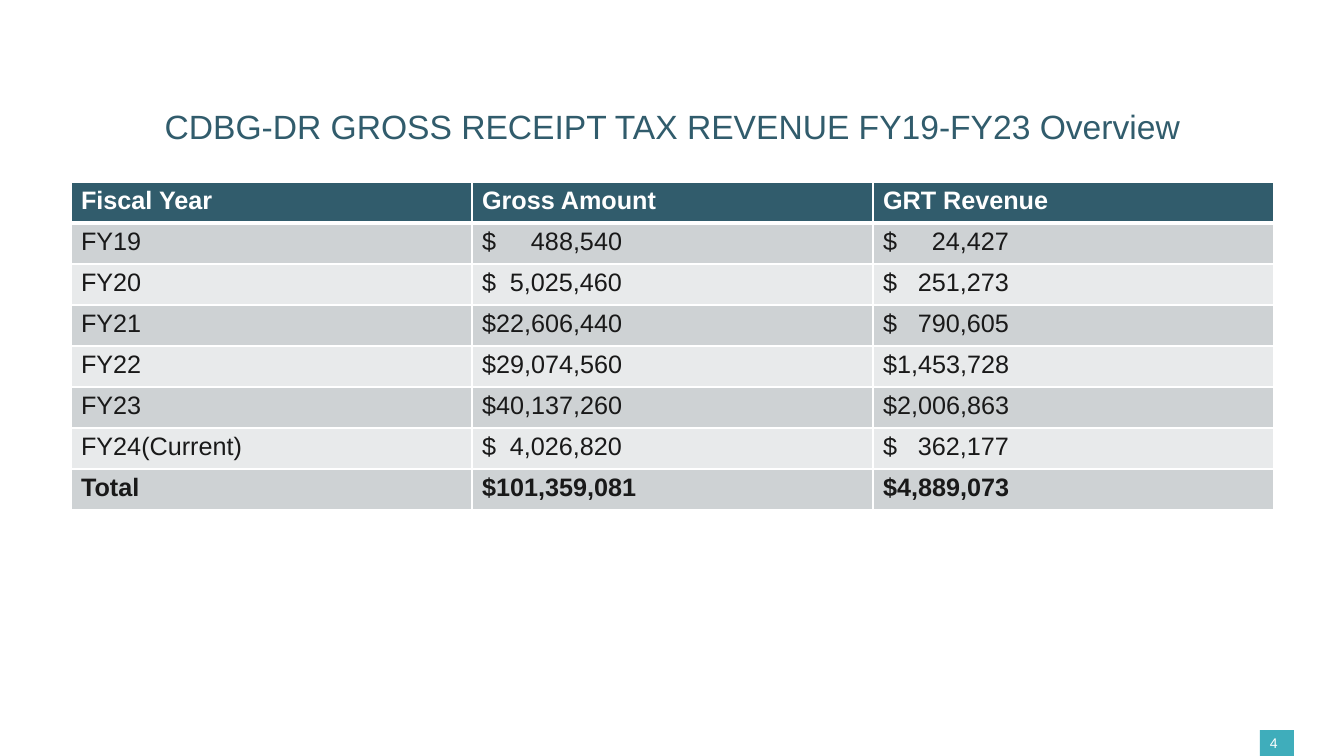
from dataclasses import dataclass

from lxml import etree
from pptx import Presentation
from pptx.dml.color import RGBColor
from pptx.enum.shapes import MSO_SHAPE
from pptx.enum.text import PP_ALIGN
from pptx.oxml.ns import qn
from pptx.util import Emu, Pt

RECTANGLE = MSO_SHAPE.RECTANGLE
LEFT, CENTER = PP_ALIGN.LEFT, PP_ALIGN.CENTER

FONT = "Arial"
WHITE, INK, TEAL, AQUA = "FFFFFF", "191919", "315C6C", "3FADBB"
BANDS = ("CED2D4", "E8EAEB")
COLUMN_WIDTH, ROW_HEIGHT = 401, 41
AMOUNT_STOPS = (0, 140, 126)
HEADINGS = ("Fiscal Year", "Gross Amount", "GRT Revenue")


@dataclass
class Area:
    left: int
    top: int
    width: int
    height: int

    def emu(self) -> list[Emu]:
        return [px(n) for n in (self.left, self.top, self.width, self.height)]


@dataclass
class YearRow:
    label: str
    gross: str
    revenue: str
    bold: bool = False


YEARS = [
    YearRow("FY19", "$\t488,540", "$\t24,427"),
    YearRow("FY20", "$\t5,025,460", "$\t251,273"),
    YearRow("FY21", "$22,606,440", "$\t790,605"),
    YearRow("FY22", "$29,074,560", "$1,453,728"),
    YearRow("FY23", "$40,137,260", "$2,006,863"),
    YearRow("FY24(Current)", "$\t4,026,820", "$\t362,177"),
    YearRow("Total", "$101,359,081", "$4,889,073", bold=True),
]


def px(length: int) -> Emu:
    return Emu(round(length * 914400 / 100.8))


def color(code: str) -> RGBColor:
    return RGBColor.from_string(code)


def write(frame, text: str, *, size: int, ink: str, bold: bool = False,
          align=LEFT, spacing: float = 1.0, right_stop: int = 0) -> None:
    frame.word_wrap = True
    para = frame.paragraphs[0]
    if right_stop:
        tabs = etree.SubElement(para._p.get_or_add_pPr(), qn("a:tabLst"))
        etree.SubElement(tabs, qn("a:tab"), pos=str(px(right_stop)), algn="r")
    para.alignment = align
    para.line_spacing = spacing
    span = para.add_run()
    span.text = text
    span.font.name = FONT
    span.font.size = Pt(size)
    span.font.bold = bold
    span.font.color.rgb = color(ink)


def add_text(page, area: Area, text: str, **style) -> None:
    write(page.shapes.add_textbox(*area.emu()).text_frame, text, **style)


def add_block(page, area: Area, fill: str) -> None:
    block = page.shapes.add_shape(RECTANGLE, *area.emu())
    block.shadow.inherit = False
    block.fill.solid()
    block.fill.fore_color.rgb = color(fill)
    block.line.fill.background()


def set_borders(cell, top: int, bottom: int) -> None:
    properties = cell._tc.get_or_add_tcPr()
    for side, width in (("L", 1), ("R", 1), ("T", top), ("B", bottom)):
        line = etree.SubElement(properties, qn(f"a:ln{side}"), w=str(Pt(width)))
        fill = etree.SubElement(line, qn("a:solidFill"))
        etree.SubElement(fill, qn("a:srgbClr"), val=WHITE)


def add_revenue_table(page, left: int, top: int) -> None:
    rows = [YearRow(*HEADINGS, bold=True), *YEARS]
    area = Area(left, top, COLUMN_WIDTH * len(HEADINGS), ROW_HEIGHT * len(rows))
    table = page.shapes.add_table(len(rows), len(HEADINGS), *area.emu()).table
    table.horz_banding = False
    for column in table.columns:
        column.width = px(COLUMN_WIDTH)
    for index, row in enumerate(rows):
        table.rows[index].height = px(ROW_HEIGHT)
        is_header = index == 0
        fill = TEAL if is_header else BANDS[(index - 1) % 2]
        texts = (row.label, row.gross, row.revenue)
        for column, (text, stop) in enumerate(zip(texts, AMOUNT_STOPS)):
            cell = table.cell(index, column)
            set_borders(cell, top=3 if index == 1 else 1, bottom=3 if is_header else 1)
            cell.fill.solid()
            cell.fill.fore_color.rgb = color(fill)
            write(cell.text_frame, text, size=18, ink=WHITE if is_header else INK,
                  bold=row.bold, right_stop=stop if "\t" in text else 0)


def main() -> None:
    deck = Presentation()
    deck.slide_width, deck.slide_height = px(1344), px(756)
    page = deck.slides.add_slide(deck.slide_layouts[6])
    add_block(page, Area(1260, 730, 34, 26), AQUA)
    add_revenue_table(page, 71, 182)
    add_text(page, Area(71, 105, 1203, 61),
             "CDBG-DR GROSS RECEIPT TAX REVENUE FY19-FY23 Overview",
             size=24, ink=TEAL, align=CENTER, spacing=0.9)
    add_text(page, Area(1260, 730, 42, 34), "4", size=10, ink=WHITE)
    deck.save("out.pptx")


if __name__ == "__main__":
    main()
